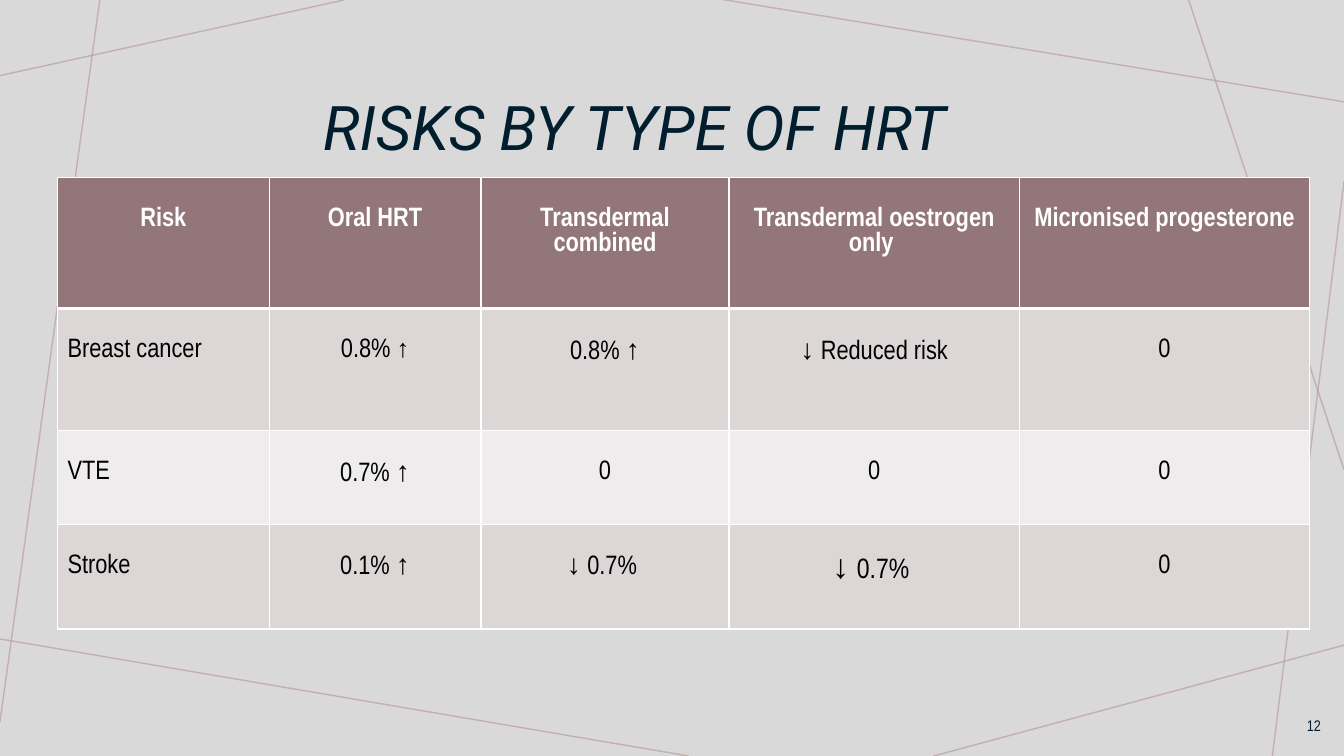
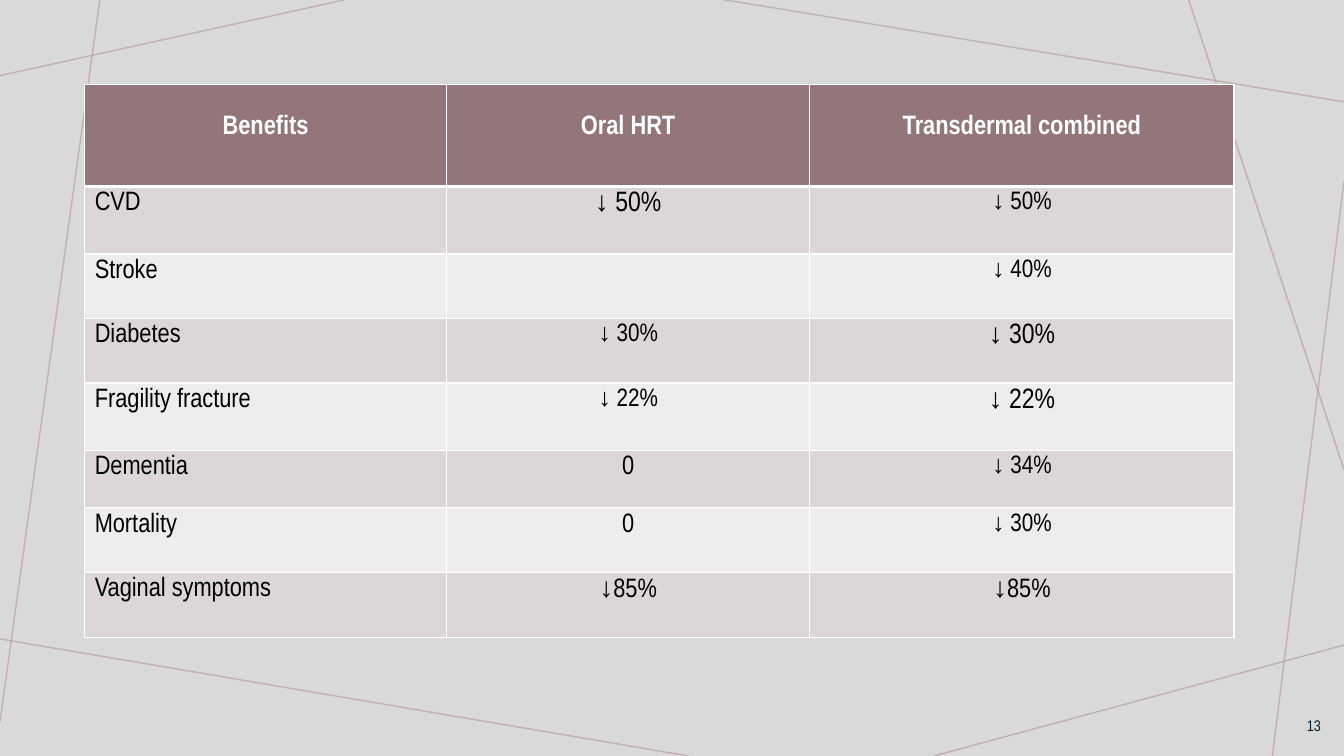
from lxml.etree import SubElement
from pptx import Presentation
from pptx.dml.color import RGBColor
from pptx.enum.shapes import MSO_CONNECTOR
from pptx.enum.text import MSO_ANCHOR, PP_ALIGN
from pptx.oxml.ns import qn
from pptx.util import Pt

PX = 9144
W, H = 1333, 750

BACKGROUND = RGBColor(0xD9, 0xD9, 0xD9)
NAVY = RGBColor(0x00, 0x1E, 0x2E)
MAUVE = RGBColor(0x93, 0x76, 0x7A)
PALE_MAUVE = RGBColor(0xDC, 0xD6, 0xD7)
PALE_GREY = RGBColor(0xEE, 0xEC, 0xEC)
LINE_MAUVE = RGBColor(0xBA, 0x9C, 0xA0)
WHITE = RGBColor(0xFF, 0xFF, 0xFF)
BLACK = RGBColor(0x00, 0x00, 0x00)

BODY_FONT = "Arial Narrow"
TITLE_FONT = "Roboto"
CELL_SIZE = 19
LOW_TOP, HIGH_TOP = 30, 5

BACKDROP_LINES = [
    (341, 0, 0, 75),
    (99, 0, 0, 716),
    (683, 750, -5, 633),
    (1333, 640, 926, 750),
    (1333, 180, 1262, 750),
    (1333, 466, 1179, 0),
    (1333, 101, 714, -1),
]

RISK_COLS = [210, 210, 246, 288, 288]
RISK_HEIGHTS = [130, 121, 93, 104]
RISKS = [
    ["Risk", "Oral HRT", "Transdermal combined",
     "Transdermal oestrogen only ", "Micronised progesterone"],
    ["Breast cancer", [("0.8% ", 19), ("↑", 18)], [("0.8% ", 19), ("↑", 20)],
     [("↓ ", 20), ("Reduced risk", 19)], "0"],
    ["VTE", [("0.7% ", 19), ("↑", 20)], "0", "0", "0"],
    ["Stroke", [("0.1% ", 19), ("↑", 20)], [("↓ ", 20), ("0.7% ", 19)],
     [("↓ ", 24), ("0.7% ", 20)], "0"],
]

BENEFIT_COLS = [359, 360, 421]
BENEFIT_HEIGHTS = [101, 67, 64, 64, 67, 57, 64, 65]
VAGINAL_CHANGE = [("↓", 20), ("85%", 19)]
BENEFITS = [
    ["Benefits", "Oral HRT", "Transdermal combined"],
    ["CVD", [("↓ 50%", 20)], [("↓ 50%", 18)]],
    ["Stroke", "", [("↓ 40%", 18)]],
    ["Diabetes", [("↓ 30%", 18)], [("↓ 30%", 20)]],
    ["Fragility fracture", [("↓ 22%", 18)], [("↓ 22%", 20)]],
    ["Dementia", "0", [("↓ 34%", 18)]],
    ["Mortality", "0", [("↓ 30%", 18)]],
    ["Vaginal symptoms", VAGINAL_CHANGE, VAGINAL_CHANGE],
]


def px(*values):
    return [v * PX for v in values]


def set_font(font, name, size, color, bold=False, italic=False):
    font.name = name
    font.size = Pt(size)
    font.color.rgb = color
    font.bold = bold
    font.italic = italic


def add_backdrop_line(s, ends):
    line = s.shapes.add_connector(MSO_CONNECTOR.STRAIGHT, *px(*ends))
    line.line.color.rgb = LINE_MAUVE
    line.line.width = Pt(1)
    color = line.line._get_or_add_ln().find(".//" + qn("a:srgbClr"))
    SubElement(color, qn("a:alpha"), val="70000")
    SubElement(line._element.spPr, qn("a:effectLst"))


def add_text(s, box, text, align, anchor):
    tf = s.shapes.add_textbox(*px(*box)).text_frame
    tf.word_wrap = True
    tf.vertical_anchor = anchor
    p = tf.paragraphs[0]
    p.text = text
    p.alignment = align
    return p


def add_title(s, text):
    p = add_text(s, (92, 74, 1075, 93), text, PP_ALIGN.CENTER, MSO_ANCHOR.BOTTOM)
    p.line_spacing = 0.9
    set_font(p.font, TITLE_FONT, 44, NAVY, italic=True)


def add_slide(prs, number):
    s = prs.slides.add_slide(prs.slide_layouts[6])
    s.background.fill.solid()
    s.background.fill.fore_color.rgb = BACKGROUND
    for ends in BACKDROP_LINES:
        add_backdrop_line(s, ends)
    p = add_text(s, (1269, 700, 51, 40), str(number), PP_ALIGN.RIGHT, MSO_ANCHOR.MIDDLE)
    set_font(p.font, BODY_FONT, 11, NAVY)
    return s


def set_borders(cell, top, bottom):
    tcPr = cell._tc.get_or_add_tcPr()
    for side, width in (("L", 1), ("R", 1), ("T", top), ("B", bottom)):
        ln = SubElement(tcPr, qn(f"a:ln{side}"), w=str(Pt(width)))
        fill = SubElement(ln, qn("a:solidFill"))
        SubElement(fill, qn("a:srgbClr"), val=str(WHITE))


def fill_cell(cell, content, row, col, body_top):
    header = row == 0
    set_borders(cell, 3 if row == 1 else 1, 3 if header else 1)
    cell.fill.solid()
    cell.fill.fore_color.rgb = MAUVE if header else PALE_MAUVE if row % 2 else PALE_GREY
    cell.margin_left, cell.margin_right, cell.margin_bottom = px(10, 10, 5)
    cell.margin_top = (LOW_TOP if header else body_top) * PX
    p = cell.text_frame.paragraphs[0]
    p.alignment = PP_ALIGN.CENTER if header or col else PP_ALIGN.LEFT
    set_font(p.font, BODY_FONT, CELL_SIZE, WHITE if header else BLACK, bold=header)
    if isinstance(content, str):
        if content:
            p.add_run().text = content
        return
    for text, size in content:
        r = p.add_run()
        r.text = text
        if len(content) == 1:
            p.font.size = Pt(size)
        else:
            r.font.size = Pt(size)


def add_grid(s, left, top, cols, heights, rows, body_top):
    box = px(left, top, sum(cols), sum(heights))
    table = s.shapes.add_table(len(rows), len(cols), *box).table
    for column, width in zip(table.columns, cols):
        column.width = width * PX
    for i, (height, row) in enumerate(zip(heights, rows)):
        table.rows[i].height = height * PX
        for j, content in enumerate(row):
            fill_cell(table.cell(i, j), content, i, j, body_top)


def main():
    prs = Presentation()
    prs.slide_width, prs.slide_height = px(W, H)

    s = add_slide(prs, 12)
    add_grid(s, 57, 176, RISK_COLS, RISK_HEIGHTS, RISKS, LOW_TOP)
    add_title(s, "RISKS BY TYPE OF HRT")

    s = add_slide(prs, 13)
    add_grid(s, 84, 84, BENEFIT_COLS, BENEFIT_HEIGHTS, BENEFITS, HIGH_TOP)

    prs.save("out.pptx")


if __name__ == "__main__":
    main()
